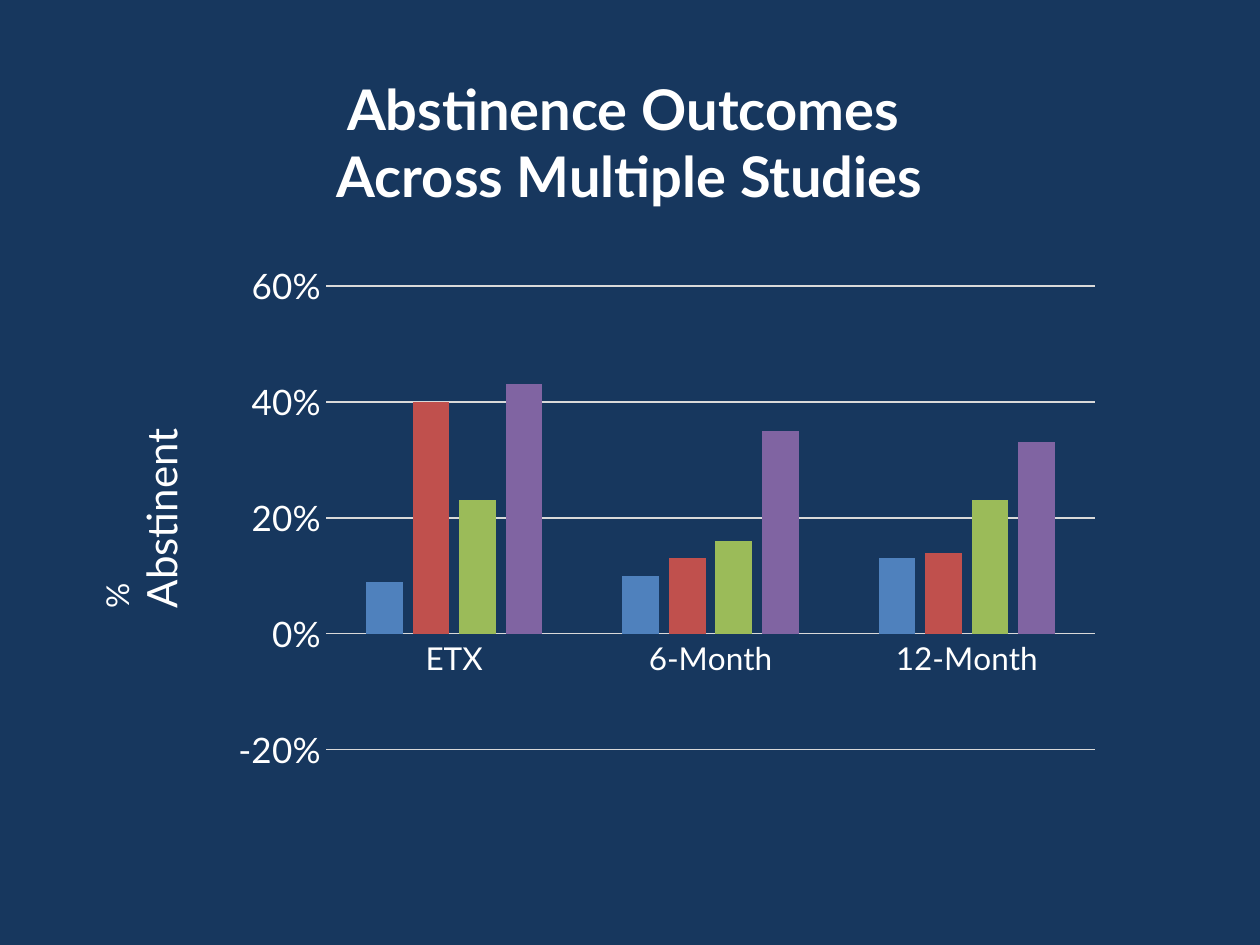
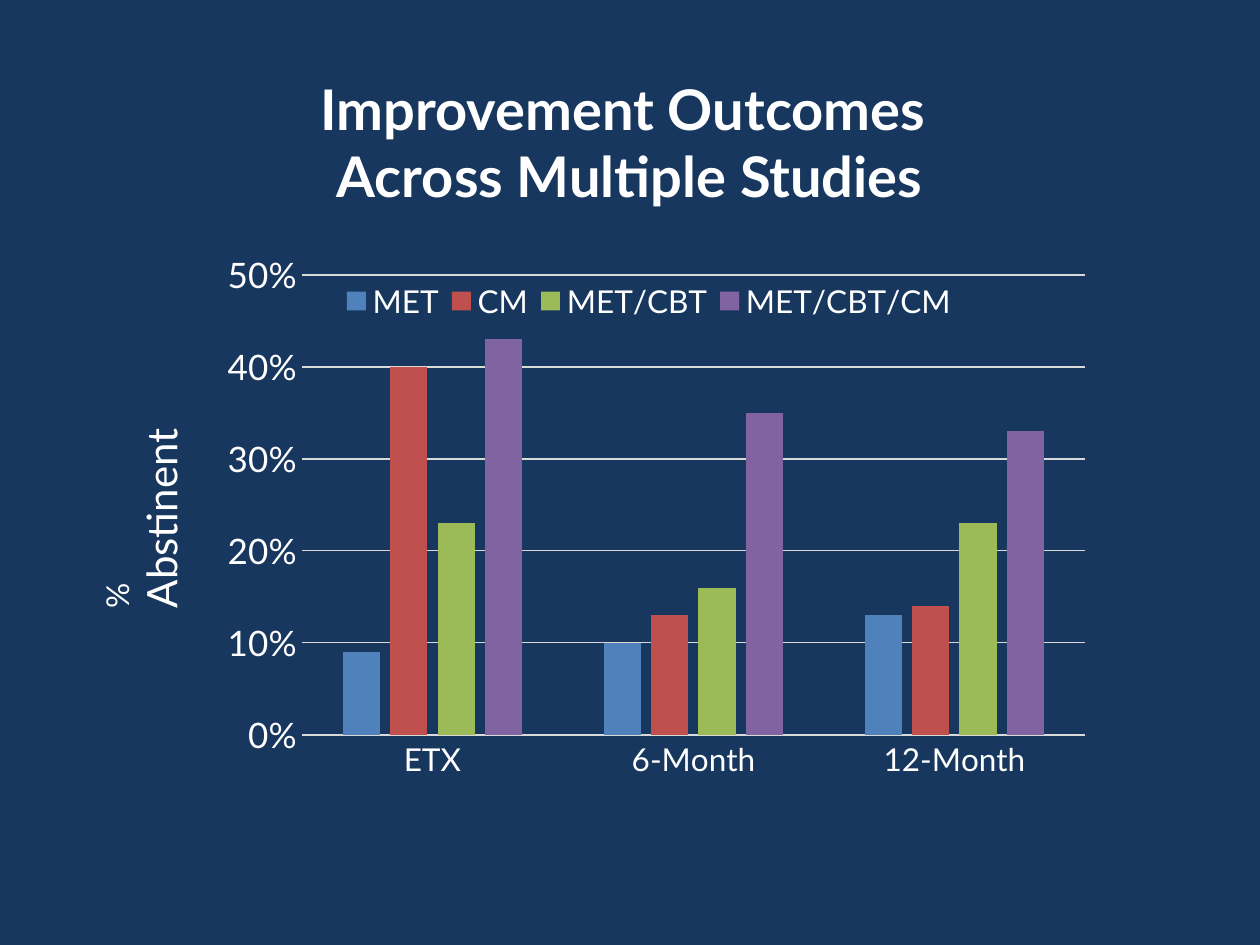
from lxml import etree
from pptx import Presentation
from pptx.chart.data import CategoryChartData
from pptx.dml.color import RGBColor
from pptx.enum.chart import XL_CHART_TYPE, XL_LEGEND_POSITION, XL_TICK_MARK
from pptx.enum.text import MSO_ANCHOR, PP_ALIGN
from pptx.oxml.ns import qn
from pptx.util import Emu, Pt

COLUMNS = XL_CHART_TYPE.COLUMN_CLUSTERED
BOTTOM = XL_LEGEND_POSITION.BOTTOM
NO_TICK = XL_TICK_MARK.NONE
MIDDLE, TOP = MSO_ANCHOR.MIDDLE, MSO_ANCHOR.TOP
CENTER, LEFT = PP_ALIGN.CENTER, PP_ALIGN.LEFT

FONT = "Lato"
COLORS = {"back": "17375E", "text": "FFFFFF", "grid": "D9D9D9"}
PERIODS = ["ETX", "6-Month", "12-Month"]
SERIES = [
    ("MET", "4F81BD", (0.09, 0.10, 0.13)),
    ("CM", "C0504D", (0.40, 0.13, 0.14)),
    ("MET/CBT", "9BBB59", (0.23, 0.16, 0.23)),
    ("MET/CBT/CM", "8064A2", (0.43, 0.35, 0.33)),
]
# Boxes are left, top, width, height in px on the slide.
SLIDES = [
    {"title": "Abstinence Outcomes \vAcross Multiple Studies",
     "chart": (220, 252, 892, 609), "plot": (326, 286, 769, 464),
     "scale": (-0.2, 0.6, 0.2), "legend": None},
    {"title": "Improvement Outcomes \vAcross Multiple Studies",
     "chart": (210, 242, 892, 609), "plot": (302, 275, 783, 460),
     "scale": (0, 0.5, 0.1), "legend": (334, 282, 630, 36)},
]
TITLE_BOX = (94, 84, 1072, 116)
LABEL_BOX = (10, 476, 226, 63)
LABEL = [("% ", 18), ("Abstinent", 24)]
PX = 914400 / 126


def px(*sizes):
    return [Emu(round(size * PX)) for size in sizes]


def color(name):
    return RGBColor.from_string(COLORS[name])


def style(font, size, bold=False):
    font.name, font.size, font.bold = FONT, Pt(size), bold
    font.color.rgb = color("text")


def add_box(slide, box, anchor, align):
    """Add an empty text box and return its shape and first paragraph."""
    shape = slide.shapes.add_textbox(*px(*box))
    frame = shape.text_frame
    frame.word_wrap = True
    frame.vertical_anchor = anchor
    para = frame.paragraphs[0]
    para.alignment = align
    return shape, para


def add_title(slide, text):
    para = add_box(slide, TITLE_BOX, MIDDLE, CENTER)[1]
    para.text = text
    for run in para.runs:
        style(run.font, 32, True)


def add_label(slide):
    shape, para = add_box(slide, LABEL_BOX, TOP, LEFT)
    shape.rotation = 270
    for text, size in LABEL:
        run = para.add_run()
        run.text = text
        style(run.font, size)


def place(part, index, box, chart_box, inner=False):
    """Fix a chart part at a box, as fractions of the chart."""
    for old in part.findall(qn("c:layout")):
        part.remove(old)
    layout = etree.Element(qn("c:layout"))
    manual = etree.SubElement(layout, qn("c:manualLayout"))
    left, top, wide, high = chart_box
    rules = [("layoutTarget", "inner")] if inner else []
    rules += [("xMode", "edge"), ("yMode", "edge"),
              ("x", (box[0] - left) / wide), ("y", (box[1] - top) / high),
              ("w", box[2] / wide), ("h", box[3] / high)]
    for tag, value in rules:
        etree.SubElement(manual, qn("c:" + tag)).set("val", str(value))
    part.insert(index, layout)


def draw_line(line):
    line.color.rgb = color("grid")
    line.width = Pt(0.75)


def set_axes(chart, scale):
    cats, vals = chart.category_axis, chart.value_axis
    for axis, size in ((cats, 18), (vals, 20)):
        axis.major_tick_mark = axis.minor_tick_mark = NO_TICK
        style(axis.tick_labels.font, size)
    draw_line(cats.format.line)
    vals.format.line.fill.background()
    vals.has_major_gridlines = True
    draw_line(vals.major_gridlines.format.line)
    vals.minimum_scale, vals.maximum_scale, vals.major_unit = scale
    vals.tick_labels.number_format = "0%"
    vals.tick_labels.number_format_is_linked = False


def add_bars(slide, part):
    data = CategoryChartData(number_format="0%")
    data.categories = PERIODS
    for name, _, values in SERIES:
        data.add_series(name, values)
    chart = slide.shapes.add_chart(COLUMNS, *px(*part["chart"]), data).chart
    chart.has_title = False
    style(chart.font, 18)
    set_axes(chart, part["scale"])
    bars = chart.plots[0]
    bars.gap_width, bars.overlap = 219, -27
    bars.vary_by_categories = False
    for bar, (_, fill, _) in zip(bars.series, SERIES):
        bar.format.fill.solid()
        bar.format.fill.fore_color.rgb = RGBColor.from_string(fill)
    area = chart.element.find(".//" + qn("c:plotArea"))
    place(area, 0, part["plot"], part["chart"], inner=True)
    chart.has_legend = part["legend"] is not None
    if chart.has_legend:
        legend = chart.legend
        legend.position = BOTTOM
        legend.include_in_layout = False
        style(legend.font, 18)
        key = chart.element.find(".//" + qn("c:legend"))
        place(key, 1, part["legend"], part["chart"])


def main():
    deck = Presentation()
    deck.slide_width, deck.slide_height = px(1260, 945)
    for part in SLIDES:
        slide = deck.slides.add_slide(deck.slide_layouts[6])
        fill = slide.background.fill
        fill.solid()
        fill.fore_color.rgb = color("back")
        add_title(slide, part["title"])
        add_bars(slide, part)
        add_label(slide)
    deck.save("out.pptx")


if __name__ == "__main__":
    main()
